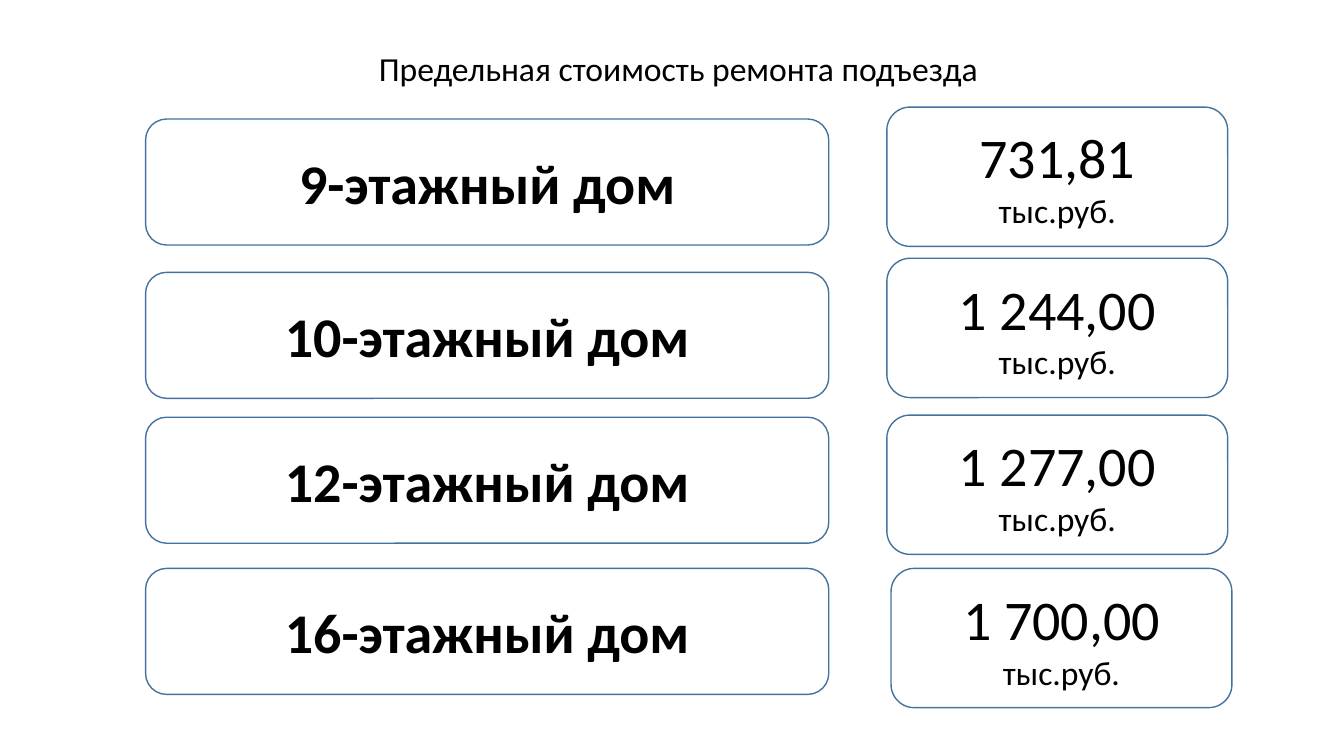
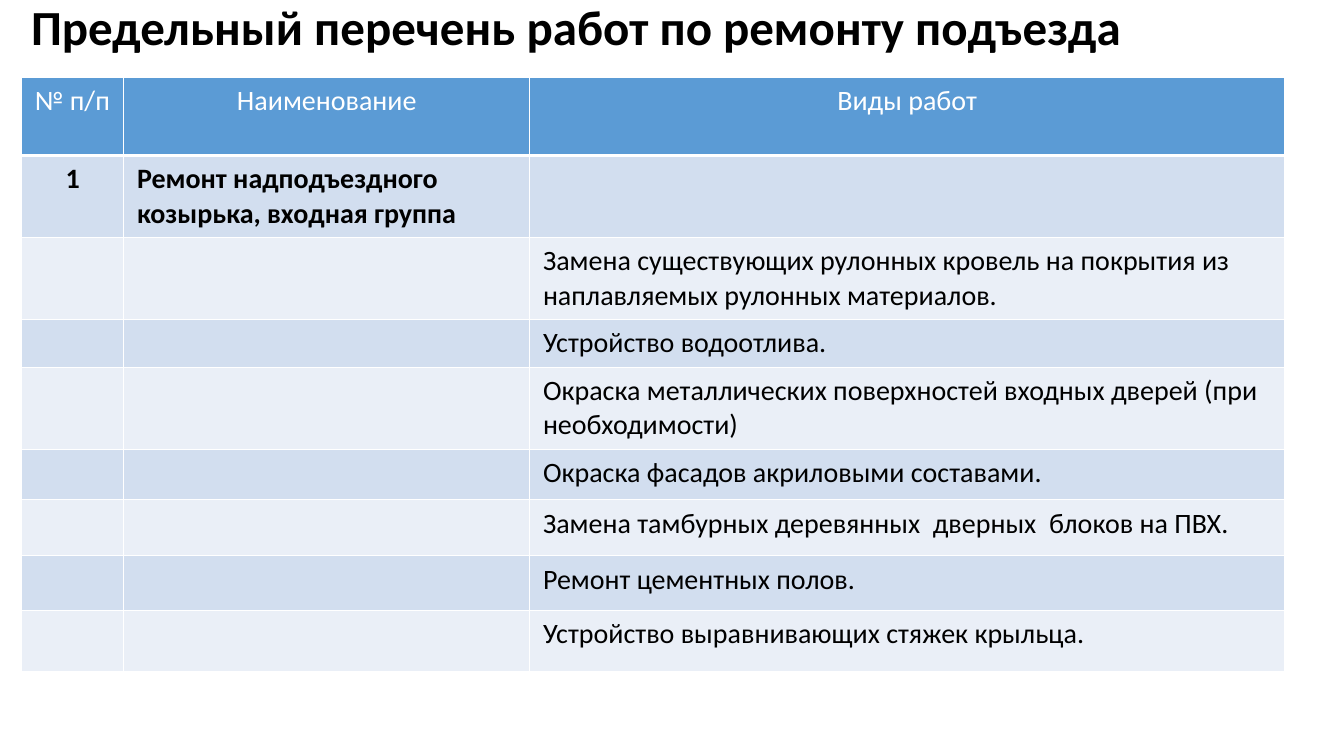
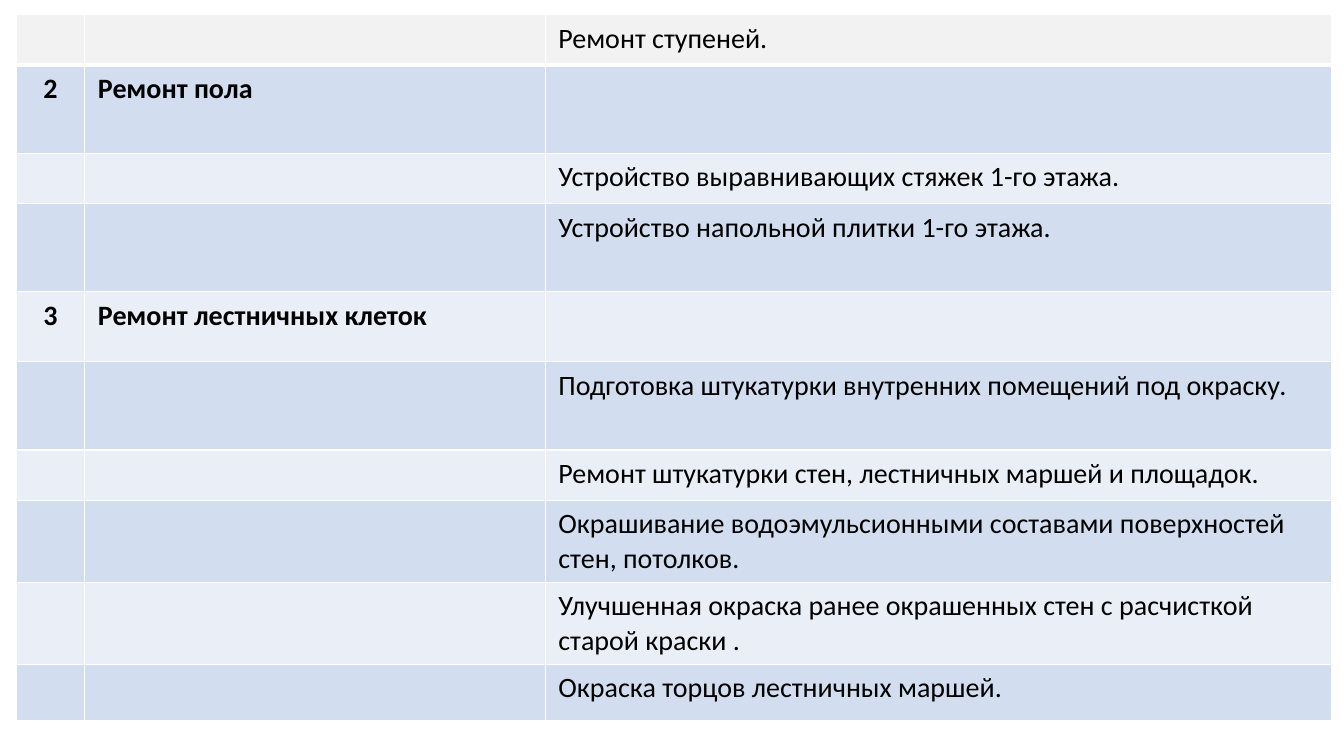
from dataclasses import dataclass

from lxml.etree import SubElement
from pptx import Presentation
from pptx.dml.color import RGBColor
from pptx.enum.shapes import MSO_SHAPE as Preset
from pptx.enum.text import MSO_ANCHOR as Anchor, MSO_AUTO_SIZE as AutoSize, PP_ALIGN as Align
from pptx.oxml.ns import qn
from pptx.util import Pt

FONT = "Calibri"
BLACK = RGBColor(0x00, 0x00, 0x00)
WHITE = RGBColor(0xFF, 0xFF, 0xFF)
OUTLINE = RGBColor(0x43, 0x73, 0x9E)
HEADER = RGBColor(0x5B, 0x9B, 0xD5)
BAND_DARK = RGBColor(0xD2, 0xDE, 0xEF)
BAND_LIGHT = RGBColor(0xEA, 0xEF, 0xF7)
PALE_GREY = RGBColor(0xF2, 0xF2, 0xF2)

TITLE_ONLY, BLANK = 5, 6
WORK_SIZE = 20


@dataclass(frozen=True)
class Box:
    left: float
    top: float
    width: float
    height: float

    def lengths(self):
        return Pt(self.left), Pt(self.top), Pt(self.width), Pt(self.height)


@dataclass(frozen=True)
class Line:
    text: str
    size: float
    bold: bool = False
    color: RGBColor = BLACK
    align: Align = Align.CENTER


@dataclass(frozen=True)
class House:
    name: str
    price: str
    name_top: float
    price_top: float
    price_left: float = 633.5


@dataclass(frozen=True)
class Work:
    height: float
    kind: str = ""
    number: str = ""
    section: str = ""


HOUSES = (
    House("9-этажный дом", "731,81", 85, 76.5),
    House("10-этажный дом", "1 244,00", 194.5, 184.5),
    House("12-этажный дом", "1 277,00", 298, 296.5),
    House("16-этажный дом", "1 700,00", 406, 406, 636.5),
)

ENTRANCE_WORKS = (
    Work(56, "Виды работ", "№ п/п", "Наименование"),
    Work(58, number="1", section="Ремонт надподъездного козырька, входная группа"),
    Work(58, "Замена существующих рулонных кровель на покрытия из наплавляемых рулонных материалов."),
    Work(34, "Устройство водоотлива."),
    Work(58, "Окраска металлических поверхностей входных дверей (при необходимости)"),
    Work(36, "Окраска фасадов акриловыми составами."),
    Work(40, "Замена тамбурных деревянных  дверных  блоков на ПВХ."),
    Work(39, "Ремонт цементных полов."),
    Work(44, "Устройство выравнивающих стяжек крыльца."),
)

INTERIOR_WORKS = (
    Work(36, "Ремонт ступеней."),
    Work(63, number="2", section="Ремонт пола"),
    Work(36, "Устройство выравнивающих стяжек 1-го этажа."),
    Work(63, "Устройство напольной плитки 1-го этажа."),
    Work(50, number="3", section="Ремонт лестничных клеток"),
    Work(63, "Подготовка штукатурки внутренних помещений под окраску."),
    Work(36, "Ремонт штукатурки стен, лестничных маршей и площадок."),
    Work(58, "Окрашивание водоэмульсионными составами поверхностей стен, потолков."),
    Work(58, "Улучшенная окраска ранее окрашенных стен с расчисткой старой краски ."),
    Work(40, "Окраска торцов лестничных маршей."),
)


def write(frame, *lines: Line) -> None:
    for index, line in enumerate(lines):
        paragraph = frame.paragraphs[0] if index == 0 else frame.add_paragraph()
        paragraph.alignment = line.align
        run = paragraph.add_run()
        run.text = line.text
        run.font.name = FONT
        run.font.size = Pt(line.size)
        run.font.bold = line.bold
        run.font.color.rgb = line.color


def add_title(slide, box: Box, line: Line) -> None:
    title = slide.shapes.title
    title.left, title.top, title.width, title.height = box.lengths()
    frame = title.text_frame
    frame.auto_size = AutoSize.NONE
    frame.word_wrap = True
    frame.vertical_anchor = Anchor.MIDDLE
    write(frame, line)
    frame.paragraphs[0].line_spacing = 0.9


def add_card(slide, box: Box, *lines: Line) -> None:
    card = slide.shapes.add_shape(Preset.ROUNDED_RECTANGLE, *box.lengths())
    card.shadow.inherit = False
    card.fill.background()
    card.line.color.rgb = OUTLINE
    card.line.width = Pt(1)
    card.text_frame.word_wrap = True
    card.text_frame.vertical_anchor = Anchor.MIDDLE
    write(card.text_frame, *lines)


def add_borders(cell, top: float, bottom: float) -> None:
    properties = cell._tc.get_or_add_tcPr()
    for side, width in (("L", 1), ("R", 1), ("T", top), ("B", bottom)):
        border = SubElement(properties, qn(f"a:ln{side}"), w=str(Pt(width)))
        solid = SubElement(border, qn("a:solidFill"))
        SubElement(solid, qn("a:srgbClr"), val=str(WHITE))


def row_lines(work: Work, heading: bool) -> tuple[Line, Line, Line]:
    color = WHITE if heading else BLACK
    bold = not heading
    number_align = Align.LEFT if heading else Align.CENTER
    text_align = Align.CENTER if heading else Align.LEFT
    return (
        Line(work.number, WORK_SIZE, bold, color, number_align),
        Line(work.section, WORK_SIZE, bold, color, text_align),
        Line(work.kind, WORK_SIZE, False, color, text_align),
    )


def add_works(slide, left: float, top: float, widths: tuple[float, ...],
              works: tuple[Work, ...], first_fill: RGBColor, headed: bool) -> None:
    box = Box(left, top, sum(widths), sum(work.height for work in works))
    table = slide.shapes.add_table(len(works), len(widths), *box.lengths()).table
    table.first_row = headed
    table.horz_banding = False
    for column, width in zip(table.columns, widths):
        column.width = Pt(width)
    for index, work in enumerate(works):
        table.rows[index].height = Pt(work.height)
        band = BAND_DARK if index % 2 else BAND_LIGHT
        fill = band if index else first_fill
        lines = row_lines(work, headed and index == 0)
        for cell, line in zip(table.rows[index].cells, lines):
            add_borders(cell, top=3 if index == 1 else 1, bottom=1 if index else 3)
            cell.fill.solid()
            cell.fill.fore_color.rgb = fill
            cell.margin_left = cell.margin_right = Pt(9.4)
            cell.margin_top = cell.margin_bottom = Pt(4.8)
            if line.text:
                write(cell.text_frame, line)


def add_price_slide(deck) -> None:
    slide = deck.slides.add_slide(deck.slide_layouts[TITLE_ONLY])
    add_title(slide, Box(70.5, 36.5, 828, 28),
              Line("Предельная стоимость ремонта подъезда", 24))
    for house in HOUSES:
        add_card(slide, Box(104, house.name_top, 488, 90), Line(house.name, 40, True))
        add_card(slide, Box(house.price_left, house.price_top, 243.5, 99.5),
                 Line(house.price, 40), Line("тыс.руб.", 24))


def add_entrance_slide(deck) -> None:
    slide = deck.slides.add_slide(deck.slide_layouts[TITLE_ONLY])
    add_title(slide, Box(15, 7, 864, 29),
              Line("Предельный перечень работ по ремонту подъезда", 35, True, align=Align.LEFT))
    add_works(slide, 15.5, 55, (73, 290, 539), ENTRANCE_WORKS, HEADER, headed=True)


def add_interior_slide(deck) -> None:
    slide = deck.slides.add_slide(deck.slide_layouts[BLANK])
    add_works(slide, 11.5, 10.5, (49, 329, 562), INTERIOR_WORKS, PALE_GREY, headed=False)


def main() -> None:
    deck = Presentation()
    deck.slide_width, deck.slide_height = Pt(960), Pt(540)
    add_price_slide(deck)
    add_entrance_slide(deck)
    add_interior_slide(deck)
    deck.save("out.pptx")


if __name__ == "__main__":
    main()
